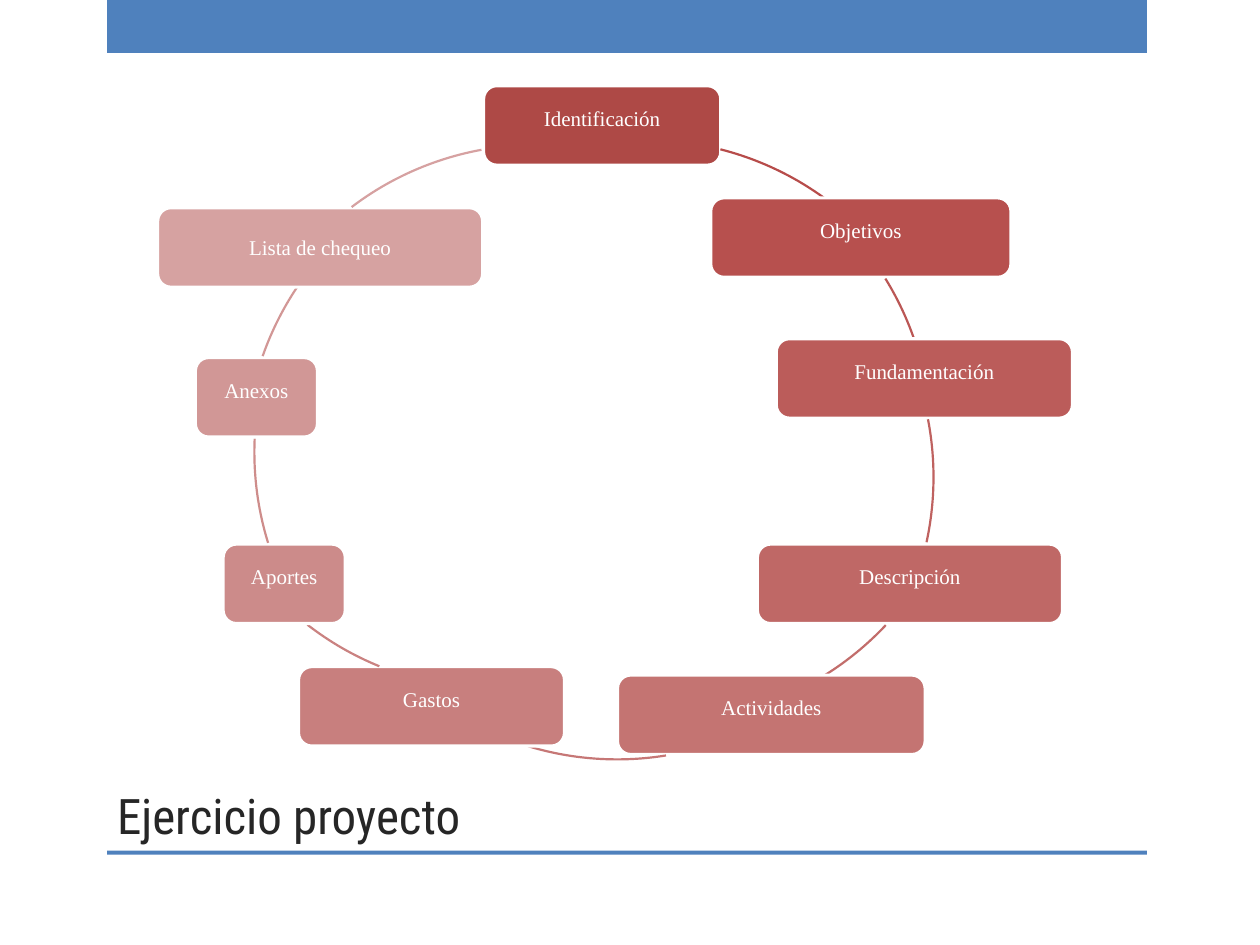
from pptx import Presentation
from pptx.dml.color import RGBColor as RGB
from pptx.enum.shapes import MSO_SHAPE as Kind
from pptx.enum.text import MSO_ANCHOR as Anchor, PP_ALIGN as Align
from pptx.util import Cm, Pt

COLORS = {
    "bar": "4F81BD", "title": "262626", "white": "FFFFFF",
    "box": ["AE4946", "B7504E", "BB5C5A", "BF6866", "C47472",
            "C87F7E", "CC8B8A", "D19796", "D6A2A1"],
    "arc": ["B74C4A", "BB5755", "BF6260", "C26D6B", "C67776",
            "CA8281", "CE8D8B", "D29796", "D6A1A1"],
}
HIGH = 1.6    # height of every step
RING = 12.34  # diameter of the circle behind each arc

# Step: label, left, top, width
STEPS = [
    ("Identificación", 9.75, 1.73, 4.78),
    ("Objetivos", 14.33, 3.99, 6.05),
    ("Fundamentación", 15.65, 6.83, 5.97),
    ("Descripción", 15.27, 10.97, 6.15),
    ("Actividades", 12.45, 13.61, 6.2),
    ("Gastos", 6.02, 13.44, 5.36),
    ("Aportes", 4.5, 10.97, 2.46),
    ("Anexos", 3.94, 7.21, 2.46),
    ("Lista de chequeo", 3.18, 4.19, 6.55),
]
# Arc after each step: circle left and top, start and end in degrees
ARCS = [
    (6.83, 2.82, 284.3, 305.8),
    (6.43, 2.69, 328.3, 340.6),
    (6.48, 3.45, 349.1, 12.3),
    (7.19, 2.21, 43.2, 57.9),
    (6.27, 2.97, 80.8, 106.9),
    (3.81, 1.55, 112.2, 127.8),
    (5.13, 2.95, 162.8, 182.6),
    (4.95, 3.05, 199.3, 213.8),
    (4.65, 2.92, 232.8, 259.6),
]

deck = Presentation()
deck.slide_width, deck.slide_height = Cm(25.4), Cm(19.05)
slide = deck.slides.add_slide(deck.slide_layouts[6])


def draw(kind, left, top, width, height, fill=None, line=None, weight=1):
    shape = slide.shapes.add_shape(
        kind, Cm(left), Cm(top), Cm(width), Cm(height))
    shape.shadow.inherit = False
    if fill:
        shape.fill.solid()
        shape.fill.fore_color.rgb = RGB.from_string(fill)
    else:
        shape.fill.background()
    if line:
        shape.line.color.rgb = RGB.from_string(line)
        shape.line.width = Pt(weight)
    else:
        shape.line.fill.background()
    return shape


def write(frame, text, font, size, color, align):
    par = frame.paragraphs[0]
    par.alignment = align
    run = par.add_run()
    run.text = text
    run.font.name = font
    run.font.size = Pt(size)
    run.font.color.rgb = RGB.from_string(color)


# Bars above and below
for top, height in ((0, 1.07), (17.15, 0.08)):
    draw(Kind.RECTANGLE, 2.16, top, 20.96, height, COLORS["bar"])

# Title
title = slide.shapes.add_textbox(Cm(2.11), Cm(12.7), Cm(18.85), Cm(4.45))
frame = title.text_frame
frame.word_wrap = True
frame.vertical_anchor = Anchor.BOTTOM
write(frame, "Ejercicio proyecto", "Roboto Condensed", 28,
      COLORS["title"], Align.LEFT)

# Cycle of steps, each followed by its arc
rows = zip(STEPS, ARCS, COLORS["box"], COLORS["arc"])
for (label, left, top, width), (x, y, start, end), fill, line in rows:
    box = draw(Kind.ROUNDED_RECTANGLE, left, top, width, HIGH,
               fill, COLORS["white"], 1.75)
    frame = box.text_frame
    frame.word_wrap = True
    frame.margin_left = frame.margin_right = Cm(0.2)
    # The last label sits in the middle, the others near the top
    last = label == STEPS[-1][0]
    frame.vertical_anchor = Anchor.MIDDLE if last else Anchor.TOP
    frame.margin_top = frame.margin_bottom = Cm(0.2 if last else 0.32)
    write(frame, label, "Times New Roman", 12, COLORS["white"], Align.CENTER)

    arc = draw(Kind.ARC, x, y, RING, RING, None, line, 1.25)
    # One degree is 60000 units, and adjustments count in 100000
    arc.adjustments[0] = start * 0.6
    arc.adjustments[1] = end * 0.6

deck.save("out.pptx")
